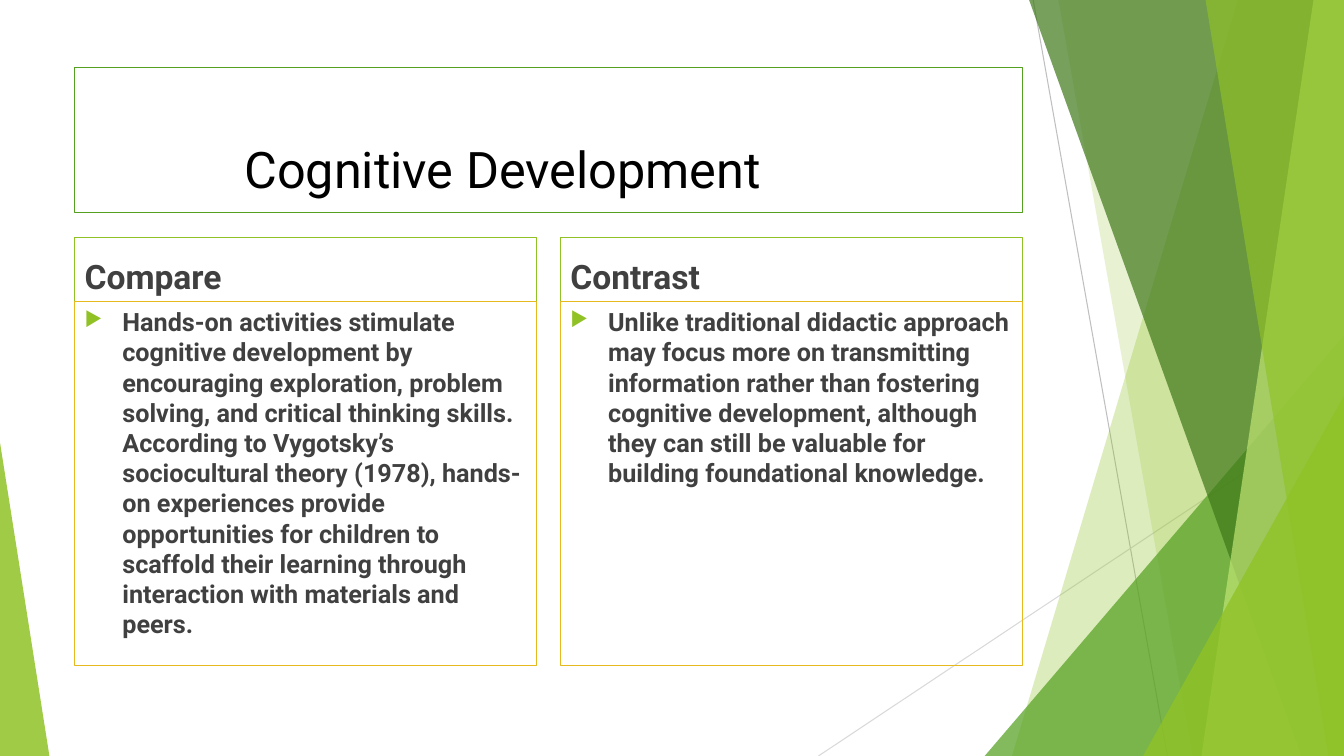
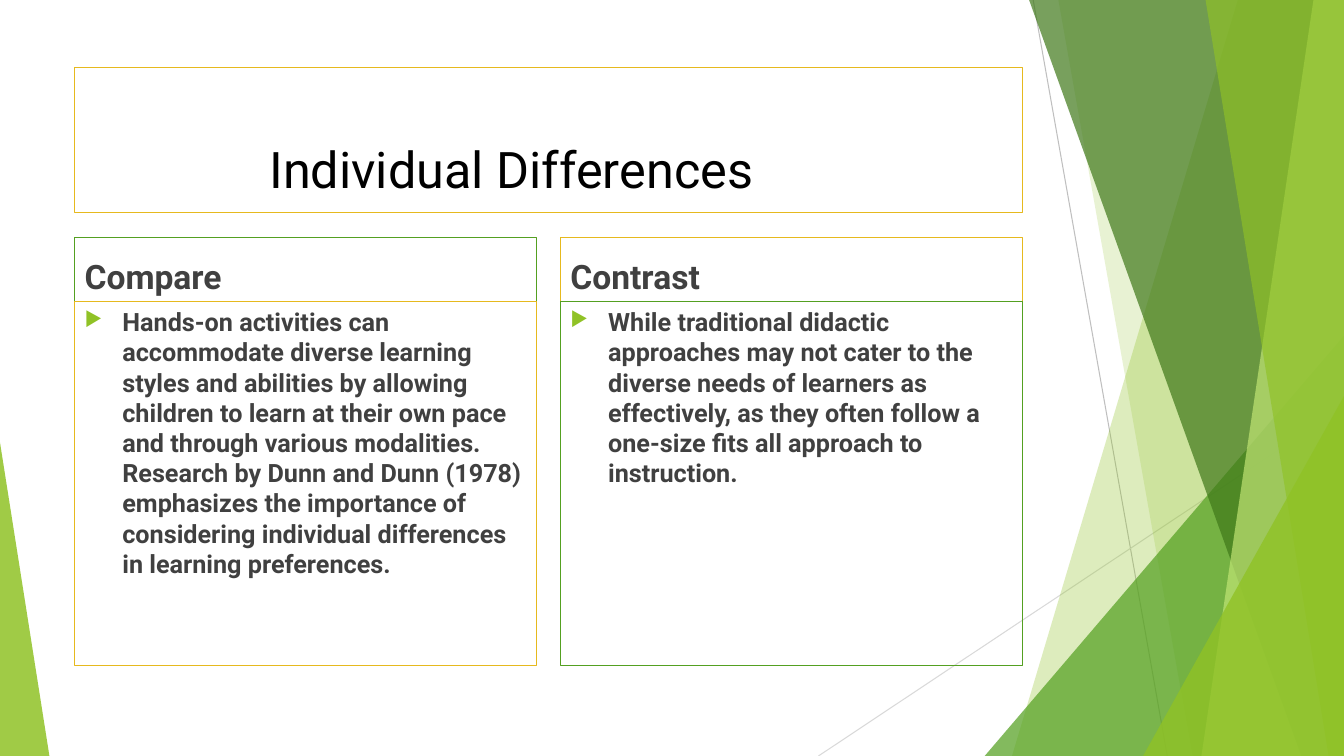
from dataclasses import dataclass

from lxml import etree
from pptx import Presentation
from pptx.dml.color import RGBColor
from pptx.enum.shapes import MSO_CONNECTOR, MSO_SHAPE
from pptx.enum.text import MSO_ANCHOR
from pptx.oxml.ns import qn
from pptx.shapes.autoshape import Shape
from pptx.slide import Slide
from pptx.util import Pt

TRIANGLE = MSO_SHAPE.ISOSCELES_TRIANGLE
STRAIGHT = MSO_CONNECTOR.STRAIGHT
TOP = MSO_ANCHOR.TOP
BOTTOM = MSO_ANCHOR.BOTTOM

LIME = RGBColor(0x90, 0xC2, 0x26)
PALE_LIME = RGBColor(0xC0, 0xE4, 0x74)
GREEN = RGBColor(0x54, 0xA0, 0x21)
DARK_GREEN = RGBColor(0x3F, 0x78, 0x19)
GOLD = RGBColor(0xE6, 0xB9, 0x1E)
SILVER = RGBColor(0xBF, 0xBF, 0xBF)
LIGHT_GRAY = RGBColor(0xD9, 0xD9, 0xD9)
CHARCOAL = RGBColor(0x40, 0x40, 0x40)
BLACK = RGBColor(0, 0, 0)

FONT = "Roboto"
SLIDE_WIDTH = 960
SLIDE_HEIGHT = 540
LINE_WIDTH = 0.75
INSET = 7.2

LEFT = 53.3
CONTENT_WIDTH = 676.8
COLUMN_WIDTH = 329.8
COLUMN_STEP = CONTENT_WIDTH - COLUMN_WIDTH
TITLE_TOP = 48.2
TITLE_HEIGHT = 103.7
HEADING_TOP = 170
HEADING_HEIGHT = 45.3
BODY_TOP = HEADING_TOP + HEADING_HEIGHT
BODY_HEIGHT = 260
BULLET_INDENT = 27


@dataclass(frozen=True)
class Ray:
    start: tuple[float, float]
    end: tuple[float, float]
    color: RGBColor


@dataclass(frozen=True)
class Wedge:
    top_x: float
    bottom_x: float
    color: RGBColor
    opacity: int


@dataclass(frozen=True)
class Corner:
    left: float
    top: float
    width: float
    apex: float
    color: RGBColor
    opacity: int


@dataclass(frozen=True)
class Column:
    heading: str
    body: str
    heading_border: RGBColor
    body_border: RGBColor


@dataclass(frozen=True)
class Topic:
    title: str
    title_indent: float
    title_border: RGBColor
    columns: tuple[Column, Column]


RAYS = (
    Ray((738, 0), (833.8, SLIDE_HEIGHT), SILVER),
    Ray((SLIDE_WIDTH, 290.2), (584.6, SLIDE_HEIGHT), LIGHT_GRAY),
)

FACETS = (
    Wedge(884.2, 722.9, LIME, 30),
    Wedge(756, 851.8, LIME, 20),
    Corner(703.4, 239.8, 256.6, 1, GREEN, 72),
    Wedge(735.1, 929.5, DARK_GREEN, 70),
    Wedge(938.2, 858.2, PALE_LIME, 70),
    Wedge(861.1, 949, LIME, 65),
    Corner(816.5, 283, 143.5, 1, LIME, 80),
    Corner(0, 316.1, 35.3, 0, LIME, 85),
)

TOPICS = (
    Topic("Cognitive Development", 114, GREEN, (
        Column(
            "Compare",
            "Hands-on activities stimulate cognitive development by encouraging "
            "exploration, problem solving, and critical thinking skills. According "
            "to Vygotsky’s sociocultural theory (1978), hands-on experiences "
            "provide opportunities for children to scaffold their learning through "
            "interaction with materials and peers.",
            LIME, GOLD),
        Column(
            "Contrast",
            "Unlike traditional didactic approach may focus more on transmitting "
            "information rather than fostering cognitive development, although "
            "they can still be valuable for building foundational knowledge.",
            LIME, GOLD),
    )),
    Topic("Individual Differences", 132, GOLD, (
        Column(
            "Compare",
            "Hands-on activities can accommodate diverse learning styles and "
            "abilities by allowing children to learn at their own pace and through "
            "various modalities. Research by Dunn and Dunn (1978) emphasizes the "
            "importance of considering individual differences in learning "
            "preferences.",
            GREEN, GOLD),
        Column(
            "Contrast",
            "While traditional didactic approaches may not cater to the diverse "
            "needs of learners as effectively, as they often follow a one-size "
            "fits all approach to instruction.",
            GOLD, GREEN),
    )),
)


def draw_ray(slide: Slide, ray: Ray) -> None:
    connector = slide.shapes.add_connector(
        STRAIGHT, *(Pt(value) for value in ray.start + ray.end))
    connector.line.color.rgb = ray.color
    connector.line.width = Pt(LINE_WIDTH)
    etree.SubElement(connector._element.spPr, qn("a:effectLst"))


def add_wedge(slide: Slide, wedge: Wedge) -> Shape:
    builder = slide.shapes.build_freeform(Pt(wedge.top_x), 0)
    builder.add_line_segments((
        (Pt(SLIDE_WIDTH), 0),
        (Pt(SLIDE_WIDTH), Pt(SLIDE_HEIGHT)),
        (Pt(wedge.bottom_x), Pt(SLIDE_HEIGHT)),
    ))
    return builder.convert_to_shape()


def add_corner(slide: Slide, corner: Corner) -> Shape:
    shape = slide.shapes.add_shape(
        TRIANGLE, Pt(corner.left), Pt(corner.top),
        Pt(corner.width), Pt(SLIDE_HEIGHT - corner.top))
    shape.adjustments[0] = corner.apex
    return shape


def draw_facet(slide: Slide, facet: Wedge | Corner) -> None:
    if isinstance(facet, Wedge):
        shape = add_wedge(slide, facet)
    else:
        shape = add_corner(slide, facet)
    shape.shadow.inherit = False
    shape.line.fill.background()
    shape.fill.solid()
    shape.fill.fore_color.rgb = facet.color
    color = shape._element.spPr.find(qn("a:solidFill"))[0]
    etree.SubElement(color, qn("a:alpha"), val=str(facet.opacity * 1000))


def draw_text_frame(slide: Slide, text: str, left: float, top: float,
                    width: float, height: float, border: RGBColor, size: int,
                    color: RGBColor = CHARCOAL, bold: bool = True,
                    anchor: MSO_ANCHOR = BOTTOM) -> Shape:
    box = slide.shapes.add_textbox(Pt(left), Pt(top), Pt(width), Pt(height))
    box.line.color.rgb = border
    box.line.width = Pt(LINE_WIDTH)
    text_frame = box.text_frame
    text_frame.word_wrap = True
    text_frame.vertical_anchor = anchor
    text_frame.text = text
    font = text_frame.paragraphs[0].runs[0].font
    font.name = FONT
    font.size = Pt(size)
    font.bold = bold
    font.color.rgb = color
    return box


def add_bullet(box: Shape) -> None:
    properties = box.text_frame.paragraphs[0]._p.get_or_add_pPr()
    properties.set("marL", str(Pt(BULLET_INDENT)))
    properties.set("indent", str(-Pt(BULLET_INDENT)))
    bullet_color = etree.SubElement(properties, qn("a:buClr"))
    etree.SubElement(bullet_color, qn("a:srgbClr"), val=str(LIME))
    etree.SubElement(properties, qn("a:buSzPct"), val="80000")
    etree.SubElement(properties, qn("a:buChar"), char="▶")


def draw_column(slide: Slide, column: Column, left: float) -> None:
    draw_text_frame(slide, column.heading, left, HEADING_TOP, COLUMN_WIDTH,
                    HEADING_HEIGHT, column.heading_border, 24)
    body = draw_text_frame(slide, column.body, left, BODY_TOP, COLUMN_WIDTH,
                           BODY_HEIGHT, column.body_border, 18, anchor=TOP)
    add_bullet(body)


def draw_topic(slide: Slide, topic: Topic) -> None:
    for ray in RAYS:
        draw_ray(slide, ray)
    for facet in FACETS:
        draw_facet(slide, facet)
    title = draw_text_frame(slide, topic.title, LEFT, TITLE_TOP, CONTENT_WIDTH,
                            TITLE_HEIGHT, topic.title_border, 36, BLACK, False)
    title.text_frame.margin_left = Pt(INSET + topic.title_indent)
    title.text_frame.margin_bottom = Pt(10)
    for index, column in enumerate(topic.columns):
        draw_column(slide, column, LEFT + index * COLUMN_STEP)


def main() -> None:
    presentation = Presentation()
    presentation.slide_width = Pt(SLIDE_WIDTH)
    presentation.slide_height = Pt(SLIDE_HEIGHT)
    blank_layout = presentation.slide_layouts[6]
    for topic in TOPICS:
        draw_topic(presentation.slides.add_slide(blank_layout), topic)
    presentation.save("out.pptx")


if __name__ == "__main__":
    main()
